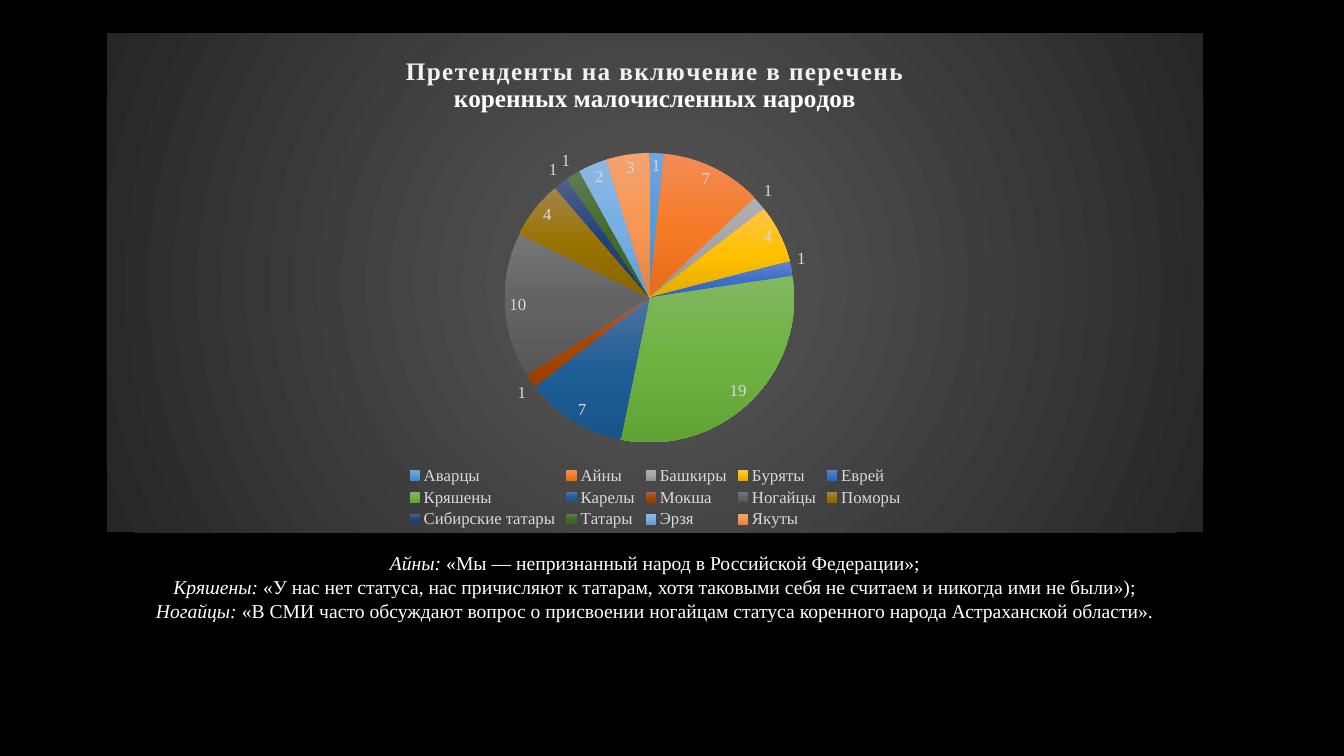
"""Build a slide with a pie chart of peoples and three quotes."""
from lxml.etree import fromstring
from pptx import Presentation
from pptx.chart.data import CategoryChartData as Data
from pptx.dml.color import RGBColor as Color
from pptx.enum.chart import XL_CHART_TYPE as Kind, XL_LABEL_POSITION as Spot, XL_LEGEND_POSITION as Side
from pptx.enum.text import MSO_AUTO_SIZE as Fit, PP_ALIGN as Align
from pptx.oxml.ns import qn
from pptx.util import Cm, Pt

NS = ('xmlns:a="http://schemas.openxmlformats.org/drawingml/2006/main" '
      'xmlns:c="http://schemas.openxmlformats.org/drawingml/2006/chart"')


def style(font, tone, **vals):
    font.color.rgb = Color.from_string(tone)
    for key, val in {"name": "Times New Roman", **vals}.items():
        setattr(font, key, val)


def shade(tones, way):
    step = 100000 // (len(tones) - 1)
    stops = "".join(f'<a:gs pos="{i * step}"><a:srgbClr val="{tone}"/></a:gs>'
                    for i, tone in enumerate(tones))
    return fromstring(f'<c:spPr {NS}><a:gradFill><a:gsLst>{stops}</a:gsLst>{way}'
                      '</a:gradFill><a:ln><a:noFill/></a:ln></c:spPr>')


peoples = [
    ("Аварцы", 1, "71A6DB 559BDB 448ACA"),
    ("Айны", 7, "F18C57 F67B28 E56C19"),
    ("Башкиры", 1, "AFAFAF A5A5A5 939393"),
    ("Буряты", 4, "FFC64B FFC000 E3AB00"),
    ("Еврей", 1, "6183CB 3E70CA 3062BB"),
    ("Кряшены", 19, "81B861 6FB242 62A336"),
    ("Карелы", 7, "51739F 205E97 17548B"),
    ("Мокша", 1, "AB634B A54707 983E00"),
    ("Ногайцы", 10, "777777 636363 585858"),
    ("Поморы", 4, "A4844B 997300 886600"),
    ("Сибирские татары", 1, "516089 22427D 1A3A72"),
    ("Татары", 1, "607B53 436B28 3B6220"),
    ("Эрзя", 2, "8CB8E2 77AFE2 649CCF"),
    ("Якуты", 3, "F4A371 F89653 E58341"),
]
quotes = [
    ("Айны:", "«Мы — непризнанный народ в Российской Федерации»;"),
    ("Кряшены:", "«У нас нет статуса, нас причисляют к татарам, хотя таковыми себя "
     "не считаем и никогда ими не были»);"),
    ("Ногайцы:", "«В СМИ часто обсуждают вопрос о присвоении ногайцам статуса "
     "коренного народа Астраханской области»."),
]

deck = Presentation()
deck.slide_width, deck.slide_height = Cm(33.87), Cm(19.05)
slide = deck.slides.add_slide(deck.slide_layouts[6])
back = slide.background.fill
back.solid()
back.fore_color.rgb = Color.from_string("000000")
left, width = Cm(2.69), Cm(27.64)

data = Data()
data.categories = [name for name, count, tones in peoples]
data.add_series("Series 1", [count for name, count, tones in peoples])
chart = slide.shapes.add_chart(Kind.PIE, left, Cm(0.84), width, Cm(12.57), data).chart
style(chart.font, "FFFFFF", size=Pt(10))
root = chart.font._element if hasattr(chart.font, "_element") else chart._chartSpace
space = chart._chartSpace
circle = '<a:path path="circle"><a:fillToRect l="50000" t="50000" r="50000" b="50000"/></a:path>'
space.find(qn("c:txPr")).addprevious(shade(["595959", "262626"], circle))

chart.has_title = True
frame = chart.chart_title.text_frame
first, second = frame.paragraphs[0], frame.add_paragraph()
for para, text, tone, gap in [
        (first, "Претенденты на включение в перечень", "F2F2F2", "100"),
        (second, "коренных малочисленных народов", "FFFFFF", "0")]:
    para.alignment = Align.CENTER
    run = para.add_run()
    run.text = text
    style(run.font, tone, size=Pt(18), bold=True)
    run._r.get_or_add_rPr().set("spc", gap)
chart.chart_title.include_in_layout = False

chart.has_legend = True
chart.legend.position = Side.BOTTOM
chart.legend.include_in_layout = False
style(chart.legend.font, "D9D9D9", size=Pt(12))

plot = chart.plots[0]
plot.vary_by_categories = True
plot.has_data_labels = True
labels = plot.data_labels
style(labels.font, "D9D9D9", size=Pt(12))
for key, val in {"show_value": True, "show_percentage": False, "position": Spot.BEST_FIT}.items():
    setattr(labels, key, val)
for i, (name, count, tones) in enumerate(peoples):
    plot.series[0].points[i].format.fill.solid()
for dot, (name, count, tones) in zip(space.iter(qn("c:dPt")), peoples):
    dot.replace(dot.find(qn("c:spPr")), shade(tones.split(), '<a:lin ang="5400000" scaled="0"/>'))

for tag, index, sizes in [
        ("c:title", 1, {"x": 0.27, "y": 0.04}),
        ("c:plotArea", 0, {"x": 0.36, "y": 0.24, "w": 0.27, "h": 0.58})]:
    part = next(space.iter(qn(tag)))
    old = part.find(qn("c:layout"))
    if old is not None:
        part.remove(old)
    inner = '<c:layoutTarget val="inner"/>' if "w" in sizes else ""
    modes = '<c:xMode val="edge"/><c:yMode val="edge"/>'
    spots = "".join(f'<c:{key} val="{val}"/>' for key, val in sizes.items())
    part.insert(index, fromstring(f'<c:layout {NS}><c:manualLayout>{inner}{modes}{spots}'
                                  '</c:manualLayout></c:layout>'))

frame = slide.shapes.add_textbox(left, Cm(13.77), width, Cm(2.06)).text_frame
frame.word_wrap = True
frame.auto_size = Fit.SHAPE_TO_FIT_TEXT
for i, (name, quote) in enumerate(quotes):
    para = frame.add_paragraph() if i else frame.paragraphs[0]
    para.alignment = Align.CENTER
    for text, slant in [(name, True), (" " + quote, False)]:
        run = para.add_run()
        run.text = text
        style(run.font, "FFFFFF", size=Pt(14), italic=slant)

deck.save("out.pptx")
